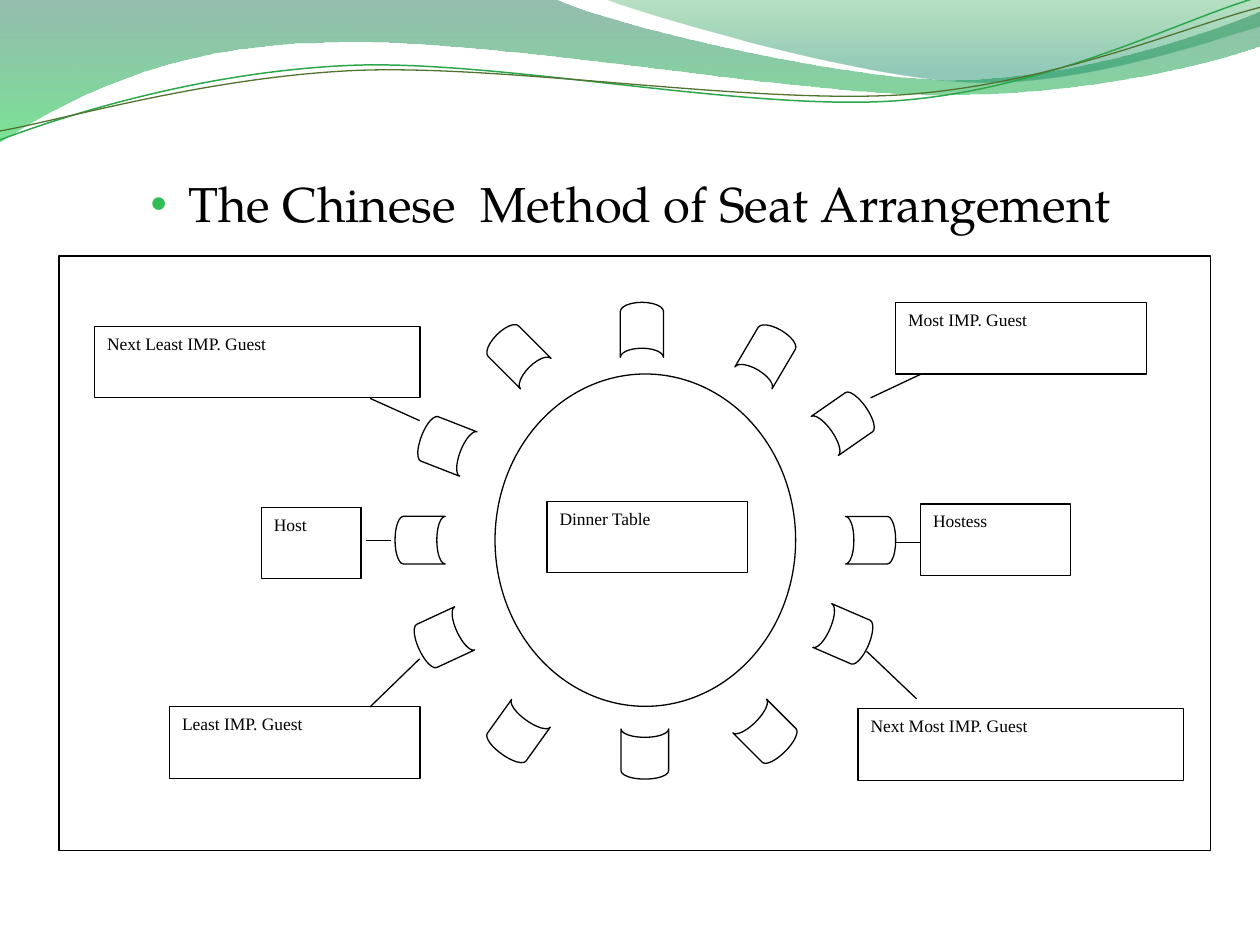
from dataclasses import dataclass

from lxml.etree import SubElement
from pptx import Presentation
from pptx.dml.color import RGBColor
from pptx.enum.shapes import MSO_CONNECTOR, MSO_SHAPE
from pptx.enum.text import MSO_ANCHOR, MSO_AUTO_SIZE, PP_ALIGN
from pptx.oxml.ns import qn
from pptx.util import Cm, Pt

BLACK = RGBColor(0x00, 0x00, 0x00)
WHITE = RGBColor(0xFF, 0xFF, 0xFF)
PINE = RGBColor(0x15, 0x6C, 0x4F)
LIME = RGBColor(0x0C, 0xCE, 0x3D)
GRASS = RGBColor(0x16, 0x9B, 0x38)
TEAL = RGBColor(0x10, 0x89, 0x62)
LEAF = RGBColor(0x2D, 0xA7, 0x4C)
OLIVE = RGBColor(0x50, 0x74, 0x2F)


@dataclass
class Stop:
    pos: float
    color: RGBColor
    alpha: int


@dataclass
class Chair:
    x: float  # centre
    y: float
    turn: float
    size: tuple


@dataclass
class Label:
    text: str
    x: float
    y: float
    width: float


WIDE, SLIM = (1.01, 0.96), (1.11, 0.87)
CHAIRS = [
    Chair(8.47, 10.89, 0, WIDE), Chair(17.55, 10.89, 180, WIDE),
    Chair(12.94, 6.65, 90, SLIM), Chair(13, 15.2, 270, WIDE),
    Chair(10.41, 7.14, 45.1, SLIM), Chair(8.97, 8.97, 21.3, WIDE),
    Chair(15.47, 7.14, 120.5, SLIM), Chair(17.04, 8.5, 145.2, WIDE),
    Chair(8.91, 12.88, 335.1, WIDE), Chair(10.41, 14.79, 305.6, WIDE),
    Chair(17.04, 12.81, 203.4, WIDE), Chair(15.47, 14.79, 225, WIDE),
]
LABELS = [
    Label("Next Least IMP. Guest", 1.91, 6.58, 6.56),
    Label("Most IMP. Guest", 18.06, 6.1, 5.05),
    Label("Host", 5.27, 10.23, 2.01),
    Label("Hostess", 18.56, 10.16, 3.02),
    Label("Dinner Table", 11.03, 10.11, 4.04),
    Label("Least IMP. Guest", 3.42, 14.25, 5.05),
    Label("Next Most IMP. Guest", 17.3, 14.29, 6.56),
]
LINKS = [
    (7.46, 8.03, 8.46, 8.48), (17.55, 8.02, 18.57, 7.54),
    (7.37, 10.89, 7.88, 10.89), (18.06, 10.94, 18.56, 10.94),
    (8.46, 13.28, 7.46, 14.25), (17.47, 13.13, 18.48, 14.09),
]
# Two numbers make a straight step, six a cubic curve.
BANDS = [
    ([(0, -0.03), (11.18, -0.03), (12.09, 0.43, 16.87, 1.6, 19.25, 1.6),
      (21.67, 1.6, 24.33, 0.66, 25.4, 0.23), (25.43, 0.91),
      (24.97, 1.12, 22.1, 1.93, 18.95, 1.91),
      (15.8, 1.91, 9.7, 0.71, 6.53, 0.86),
      (3.28, 0.89, 1.17, 2.11, -0.03, 2.87)],
     (Stop(0, PINE, 45), Stop(1, LIME, 55))),
    ([(12.17, -0.03), (12.93, 0.28, 17.32, 1.57, 19.53, 1.65),
      (21.74, 1.75, 24.41, 0.81, 25.4, 0.53), (25.4, 0)],
     (Stop(0, GRASS, 30), Stop(0.8, TEAL, 45))),
]
WAVES = [
    ([(0, 2.82), (1.22, 2.36, 4.01, 1.45, 7.04, 1.32),
      (10.03, 1.19, 15.06, 2.26, 18.11, 2.03),
      (21.16, 1.8, 23.83, 0.38, 25.35, -0.05)], LEAF, 0.85),
    ([(0, 2.64), (1.19, 2.44, 4.17, 1.55, 7.19, 1.42),
      (10.24, 1.3, 15.16, 2.11, 18.21, 1.91),
      (21.23, 1.7, 23.9, 0.53, 25.4, 0.15)], OLIVE, 0.75),
]


def trace(shapes, track: list, close: bool):
    """Build a freeform, then join each curve's three points into one Bézier."""
    dots = [(Cm(step[i]), Cm(step[i + 1]))
            for step in track for i in range(0, len(step), 2)]
    pen = shapes.build_freeform(*dots[0])
    pen.add_line_segments(dots[1:], close=close)
    shape = pen.convert_to_shape()
    shape.shadow.inherit = False
    lines = list(shape._element.iter(qn("a:lnTo")))
    for step in track[1:]:
        size = len(step) // 2
        group, lines = lines[:size], lines[size:]
        if size == 3:
            first, *rest = group
            first.tag = qn("a:cubicBezTo")
            for line in rest:
                first.append(line[0])
                line.getparent().remove(line)
    return shape


def add_band(shapes, track: list, stops: tuple) -> None:
    band = trace(shapes, track, True)
    band.line.fill.background()
    band.fill.gradient()
    band.fill.gradient_angle = 270
    for slot, stop in zip(band.fill.gradient_stops, stops):
        slot.position = stop.pos
        slot.color.rgb = stop.color
    for tag, stop in zip(band._element.iter(qn("a:gs")), stops):
        SubElement(tag[0], qn("a:alpha"), val=str(stop.alpha * 1000))


def add_wave(shapes, track: list, color: RGBColor, width: float) -> None:
    wave = trace(shapes, track, False)
    wave.fill.background()
    wave.line.color.rgb = color
    wave.line.width = Pt(width)


def add_form(shapes, kind, x: float, y: float, width: float, height: float):
    form = shapes.add_shape(kind, Cm(x), Cm(y), Cm(width), Cm(height))
    form.shadow.inherit = False
    form.fill.solid()
    form.fill.fore_color.rgb = WHITE
    form.line.color.rgb = BLACK
    form.line.width = Pt(0.75)
    return form


def add_chair(shapes, chair: Chair) -> None:
    width, height = chair.size
    form = add_form(shapes, MSO_SHAPE.FLOWCHART_STORED_DATA,
                    chair.x - width / 2, chair.y - height / 2, width, height)
    form.rotation = chair.turn


def set_font(para, name: str, size: int) -> None:
    para.font.name = name
    para.font.size = Pt(size)
    para.font.color.rgb = BLACK


def add_label(shapes, label: Label) -> None:
    box = add_form(shapes, MSO_SHAPE.RECTANGLE, label.x, label.y, label.width, 1.44)
    frame = box.text_frame
    frame.word_wrap = True
    frame.vertical_anchor = MSO_ANCHOR.TOP
    frame.text = label.text
    para = frame.paragraphs[0]
    para.alignment = PP_ALIGN.JUSTIFY
    set_font(para, "Times New Roman", 10)


def add_link(shapes, x1: float, y1: float, x2: float, y2: float) -> None:
    link = shapes.add_connector(MSO_CONNECTOR.STRAIGHT, Cm(x1), Cm(y1), Cm(x2), Cm(y2))
    link.line.color.rgb = BLACK
    link.line.width = Pt(0.75)
    SubElement(link._element.spPr, qn("a:effectLst"))


def set_title(title) -> None:
    title.left, title.top, title.width, title.height = Cm(2.78), Cm(3.38), Cm(21), Cm(1.04)
    frame = title.text_frame
    frame.text = "The Chinese  Method of Seat Arrangement"
    frame.word_wrap = True
    frame.auto_size = MSO_AUTO_SIZE.NONE
    frame.vertical_anchor = MSO_ANCHOR.TOP
    para = frame.paragraphs[0]
    para.alignment = PP_ALIGN.LEFT
    props = para._p.get_or_add_pPr()
    props.set("marL", str(Cm(0.76)))
    props.set("indent", str(-Cm(0.76)))
    tint = SubElement(props, qn("a:buClr"))
    SubElement(tint, qn("a:srgbClr"), val="33BD56")
    SubElement(props, qn("a:buSzPct"), val="95000")
    SubElement(props, qn("a:buFont"), typeface="Arial")
    SubElement(props, qn("a:buChar"), char="•")
    set_font(para, "TeX Gyre Pagella", 28)


def main() -> None:
    deck = Presentation()
    deck.slide_width, deck.slide_height = Cm(25.4), Cm(19.05)
    slide = deck.slides.add_slide(deck.slide_layouts[5])
    shapes = slide.shapes
    set_title(shapes.title)
    for track, stops in BANDS:
        add_band(shapes, track, stops)
    for track, color, width in WAVES:
        add_wave(shapes, track, color, width)
    add_form(shapes, MSO_SHAPE.RECTANGLE, 1.19, 5.16, 23.22, 11.98)
    add_form(shapes, MSO_SHAPE.OVAL, 9.98, 7.54, 6.06, 6.7)
    for chair in CHAIRS:
        add_chair(shapes, chair)
    for label in LABELS:
        add_label(shapes, label)
    for ends in LINKS:
        add_link(shapes, *ends)
    deck.save("out.pptx")


if __name__ == "__main__":
    main()
